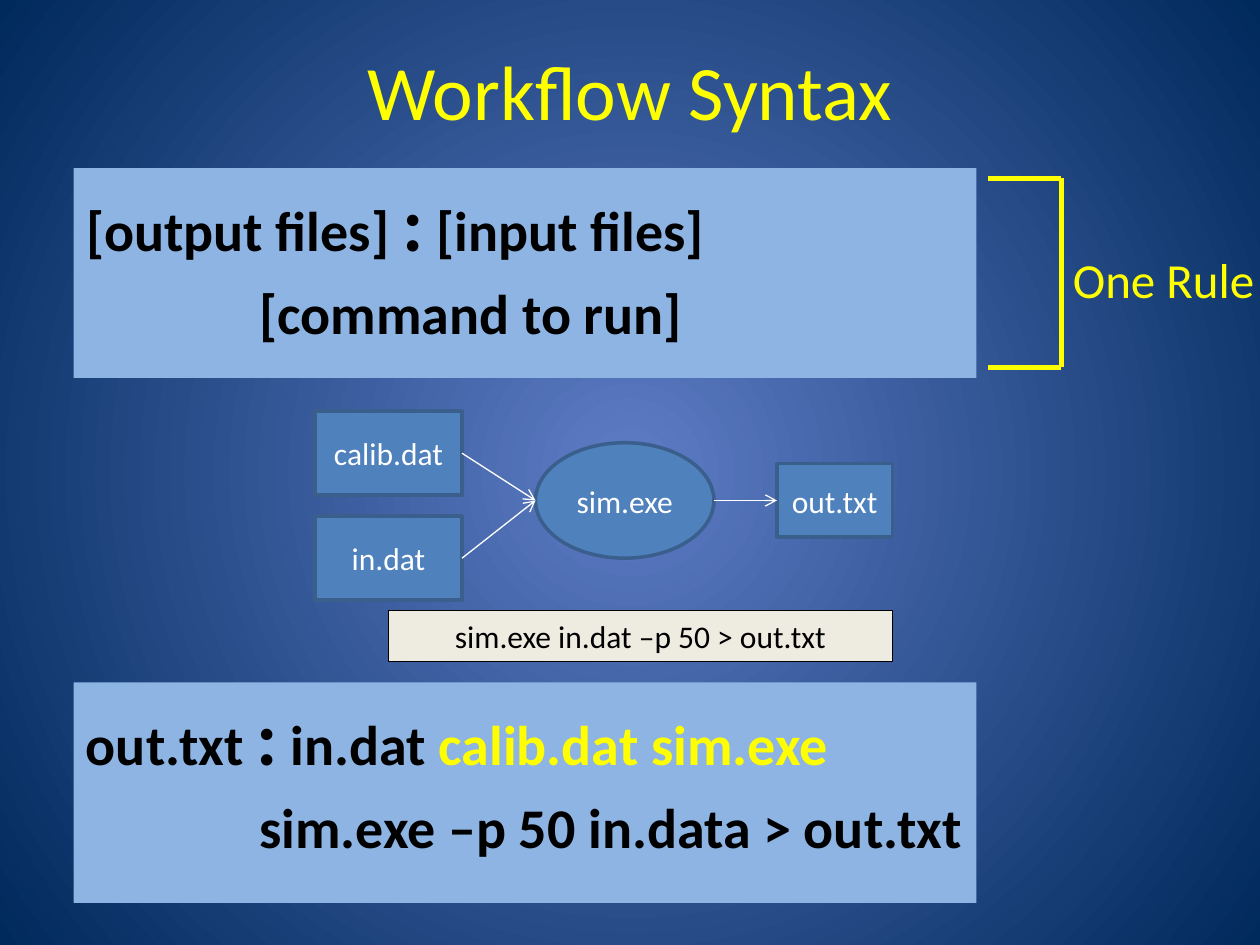
from lxml import etree
from pptx import Presentation
from pptx.dml.color import RGBColor
from pptx.enum.shapes import MSO_CONNECTOR, MSO_SHAPE
from pptx.enum.text import MSO_ANCHOR, MSO_AUTO_SIZE, PP_ALIGN
from pptx.oxml.ns import qn
from pptx.util import Pt

RECT, OVAL = MSO_SHAPE.RECTANGLE, MSO_SHAPE.OVAL
STRAIGHT = MSO_CONNECTOR.STRAIGHT
CENTER, LEFT = PP_ALIGN.CENTER, PP_ALIGN.LEFT
MIDDLE, TOP = MSO_ANCHOR.MIDDLE, MSO_ANCHOR.TOP
NO_FIT = MSO_AUTO_SIZE.NONE
SIDE_LEFT, SIDE_RIGHT = 1, 3

FONT = "Calibri"
YELLOW = RGBColor(0xFF, 0xFF, 0x00)
WHITE = RGBColor(0xFF, 0xFF, 0xFF)
BLACK = RGBColor(0, 0, 0)
GLOW = RGBColor(0x5E, 0x7C, 0xC5)
NAVY = RGBColor(0x00, 0x29, 0x5C)
PANEL = RGBColor(0x8E, 0xB4, 0xE3)
NODE = RGBColor(0x4F, 0x81, 0xBD)
NODE_LINE = RGBColor(0x3A, 0x5F, 0x8C)
CREAM = RGBColor(0xEE, 0xEC, 0xE1)


def paint_background(s):
    """Fill the slide with a gradient that spreads from its centre."""
    fill = s.background.fill
    fill.gradient()
    for stop, color in zip(fill.gradient_stops, (GLOW, NAVY)):
        stop.color.rgb = color
    grad = s.background._cSld.find(".//" + qn("a:gradFill"))
    grad.remove(grad.find(qn("a:lin")))
    radial = etree.SubElement(grad, qn("a:path"), path="circle")
    etree.SubElement(radial, qn("a:fillToRect"), l="50000", t="50000", r="50000", b="50000")


def place(sp, x, y, w, h):
    """Move and size a shape, in points."""
    sp.left, sp.top, sp.width, sp.height = Pt(x), Pt(y), Pt(w), Pt(h)


def style_run(r, size, color, bold=False):
    """Set the font of one run."""
    r.font.name, r.font.size, r.font.bold = FONT, Pt(size), bold
    r.font.color.rgb = color


def write_line(sp, text, size, color, align=CENTER, anchor=MIDDLE):
    """Write a single line of text in a shape."""
    tf = sp.text_frame
    tf.text = text
    tf.vertical_anchor = anchor
    p = tf.paragraphs[0]
    p.alignment = align
    style_run(p.runs[0], size, color)


def add_box(s, kind, box, fill, line=None, weight=0):
    """Add a filled shape, outlined if a line colour is given."""
    sp = s.shapes.add_shape(kind, *map(Pt, box))
    sp.shadow.inherit = False
    sp.fill.solid()
    sp.fill.fore_color.rgb = fill
    if line is None:
        sp.line.fill.background()
    else:
        sp.line.color.rgb = line
        sp.line.width = Pt(weight)
    return sp


def add_line(s, x1, y1, x2, y2, color, weight, arrow=False):
    """Add a straight line, with an open arrowhead if asked."""
    c = s.shapes.add_connector(STRAIGHT, Pt(x1), Pt(y1), Pt(x2), Pt(y2))
    c.line.color.rgb = color
    c.line.width = Pt(weight)
    if arrow:
        etree.SubElement(c.line._get_or_add_ln(), qn("a:tailEnd"), type="arrow")
    etree.SubElement(c._element.spPr, qn("a:effectLst"))
    return c


def write_rule(sp, lines):
    """Write a rule as bold lines of (text, size, colour) runs."""
    tf = sp.text_frame
    tf.word_wrap = True
    tf.auto_size = NO_FIT
    tf.vertical_anchor = TOP
    for i, runs in enumerate(lines):
        p = tf.add_paragraph() if i else tf.paragraphs[0]
        p.alignment = LEFT
        p.space_before = Pt(6.5)
        pPr = p._p.get_or_add_pPr()
        pPr.set("marL", str(Pt(27)))
        pPr.set("indent", str(-Pt(27)))
        pPr.set("defTabSz", str(Pt(72)))
        etree.SubElement(pPr, qn("a:buNone"))
        for text, size, color in runs:
            r = p.add_run()
            r.text = text
            style_run(r, size, color, bold=True)


def add_syntax(s, x, y, w, h):
    """Fill the body placeholder with the general form of a rule."""
    sp = s.placeholders[1]
    place(sp, x, y, w, h)
    sp.fill.solid()
    sp.fill.fore_color.rgb = PANEL
    write_rule(sp, [
        [("[output files] ", 32, BLACK), (":", 44, BLACK), (" [input files]", 32, BLACK)],
        [("\t\t[command to run]", 32, BLACK)],
    ])


def add_example(s, x, y, w, h):
    """Add the panel with a worked rule."""
    sp = add_box(s, RECT, (x, y, w, h), PANEL)
    write_rule(sp, [
        [("out.txt ", 32, BLACK), (":", 44, BLACK), (" in.dat ", 32, BLACK),
         ("calib.dat sim.exe", 32, YELLOW)],
        [("\t\tsim.exe –p 50 in.data > out.txt", 32, BLACK)],
    ])


def add_flow(s, x, y, w, h):
    """Draw the files, the program between them and its command."""
    def node(kind, text, left, top, width, height):
        sp = add_box(s, kind, (left, top, width, height), NODE, NODE_LINE, 2)
        sp.text_frame.margin_left = sp.text_frame.margin_right = 0
        write_line(sp, text, 18, WHITE)
        return sp

    mid = y + 51
    program_x, out_x = x + 126, x + w - 66
    node(OVAL, "sim.exe", program_x, mid - 33, 102, 66)
    for i, text in enumerate(("calib.dat", "in.dat")):
        top = y + 60 * i
        source = node(RECT, text, x, top, 84, 48)
        c = add_line(s, x + 84, top + 24, program_x, mid, WHITE, 0.75, arrow=True)
        c.begin_connect(source, SIDE_RIGHT)
    result = node(RECT, "out.txt", out_x, mid - 21, 66, 42)
    c = add_line(s, program_x + 102, mid, out_x, mid, WHITE, 0.75, arrow=True)
    c.end_connect(result, SIDE_LEFT)
    command = add_box(s, RECT, (x + 42, y + h - 29, w - 42, 29), CREAM, BLACK, 0.75)
    write_line(command, "sim.exe in.dat –p 50 > out.txt", 18, BLACK)


def add_bracket(s, x, y, w, h):
    """Draw a square bracket with its label on the right."""
    right, bottom = x + w, y + h
    for ends in ((x, y, right, y), (right, y, right, bottom), (x, bottom, right, bottom)):
        add_line(s, *ends, YELLOW, 3)
    sp = s.shapes.add_textbox(Pt(right - 0.5), Pt(y + h / 2 - 17), Pt(120), Pt(41))
    sp.text_frame.word_wrap = False
    write_line(sp, "One Rule", 28, YELLOW, LEFT, TOP)


def main():
    """Build the slide and save it."""
    prs = Presentation()
    prs.slide_width, prs.slide_height = Pt(720), Pt(540)
    s = prs.slides.add_slide(prs.slide_layouts[1])
    paint_background(s)
    place(s.shapes.title, 36, 6, 648, 90)
    write_line(s.shapes.title, "Workflow Syntax", 44, YELLOW)
    add_syntax(s, 42, 96, 516, 120)
    add_flow(s, 180, 235, 330, 143)
    add_bracket(s, 564.5, 102, 42, 108)
    add_example(s, 42, 390, 516, 126)
    prs.save("out.pptx")


if __name__ == "__main__":
    main()
